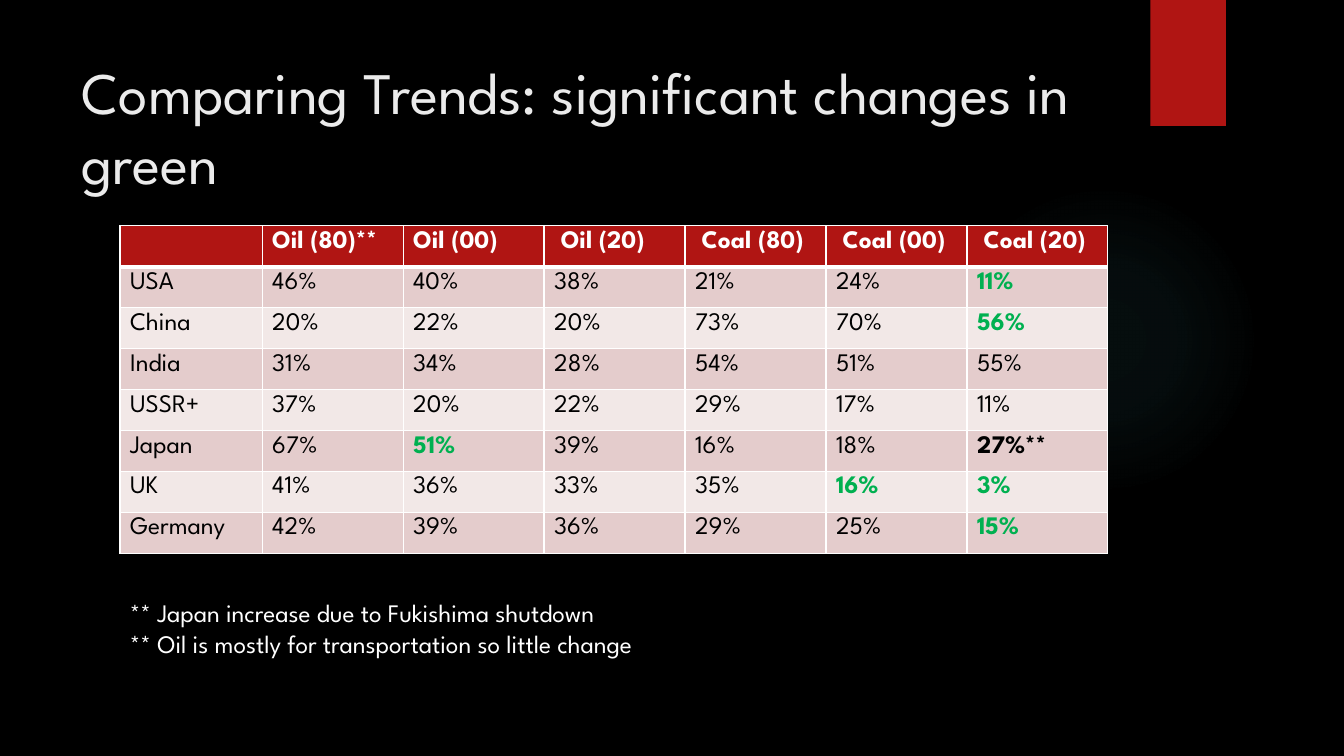
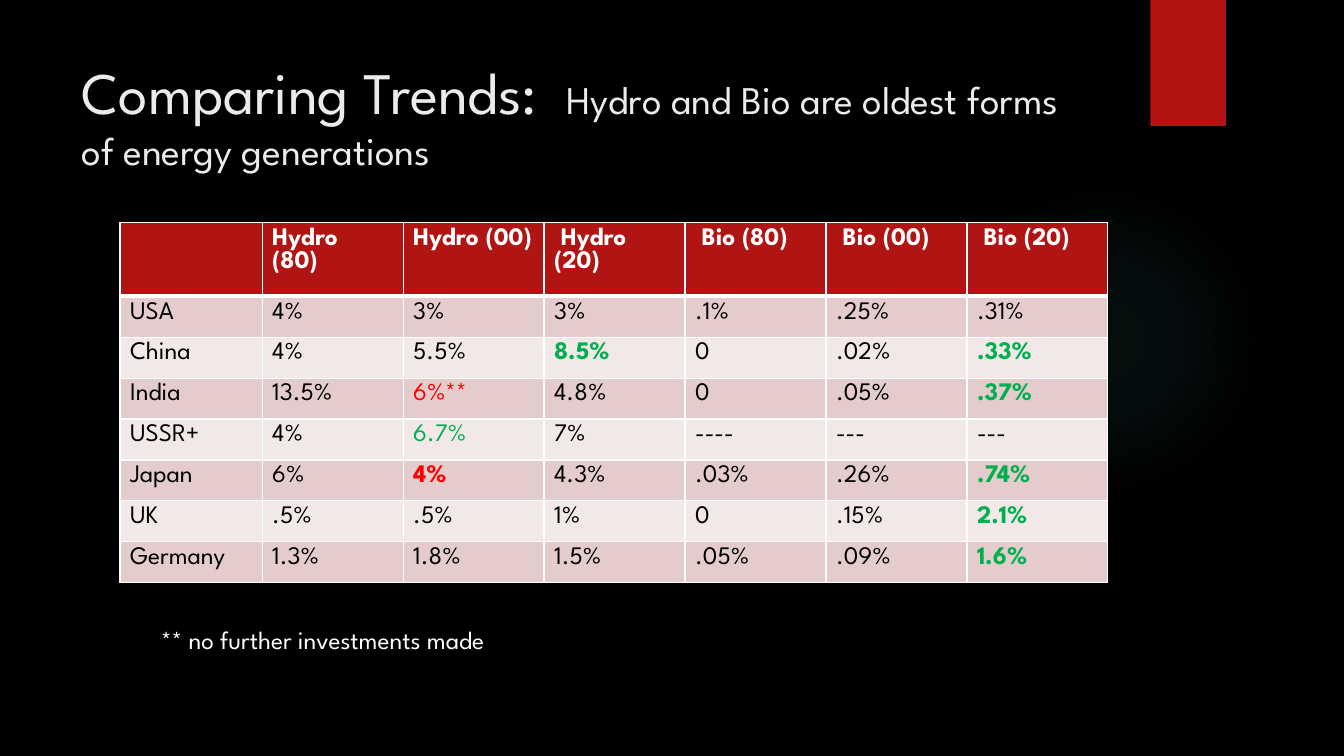
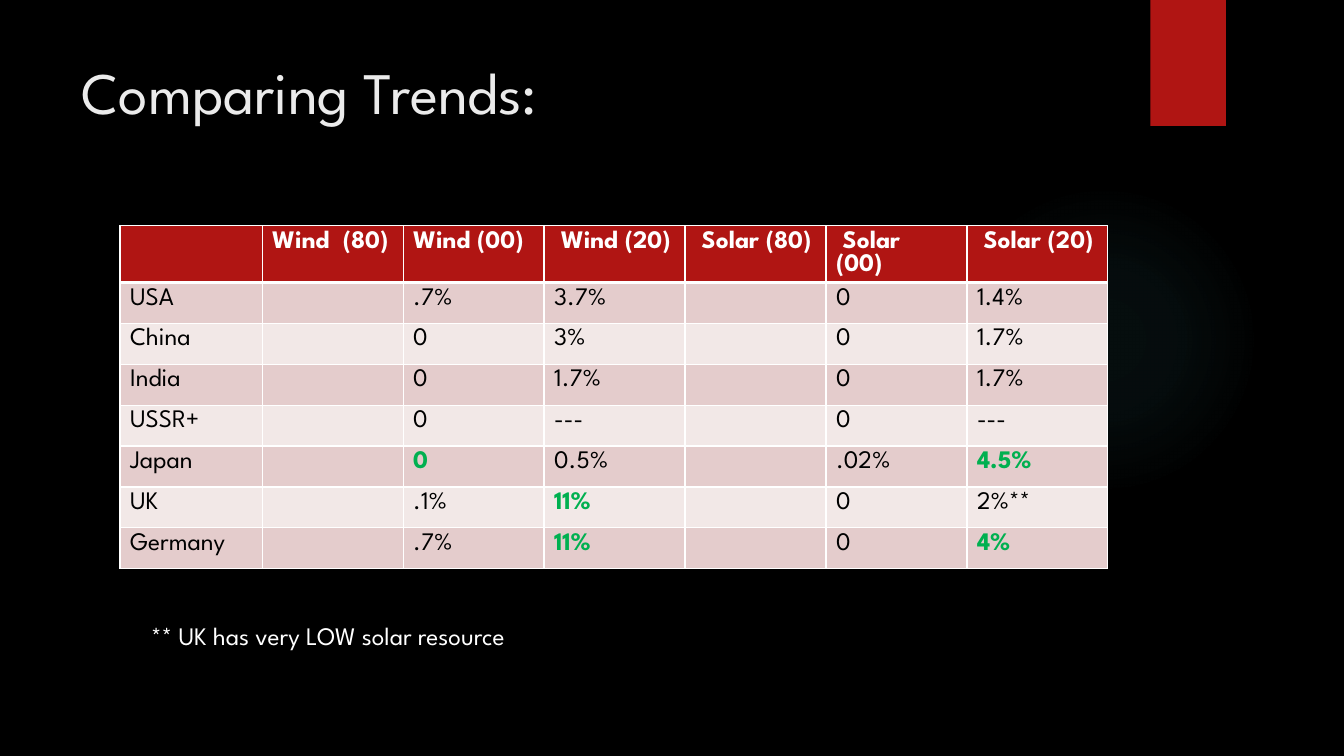
from lxml import etree
from pptx import Presentation
from pptx.dml.color import RGBColor
from pptx.enum.shapes import MSO_SHAPE
from pptx.enum.text import MSO_ANCHOR, MSO_AUTO_SIZE, PP_ALIGN
from pptx.oxml import parse_xml
from pptx.oxml.ns import qn
from pptx.util import Inches, Pt

OVAL, RECT = MSO_SHAPE.OVAL, MSO_SHAPE.RECTANGLE
TOP, LEFT = MSO_ANCHOR.TOP, PP_ALIGN.LEFT
FIXED = MSO_AUTO_SIZE.NONE

BLACK = RGBColor(0x00, 0x00, 0x00)
WHITE = RGBColor(0xFF, 0xFF, 0xFF)
PALE = RGBColor(0xEB, 0xEB, 0xEB)
RED = RGBColor(0xB0, 0x15, 0x13)
ROSE = RGBColor(0xE4, 0xCC, 0xCC)
BLUSH = RGBColor(0xF2, 0xE8, 0xE7)
GREEN = RGBColor(0x00, 0xB0, 0x50)
ALERT = RGBColor(0xFF, 0x00, 0x00)
TEAL = RGBColor(0x50, 0xB9, 0xC1)

FONT = "League Spartan"
NS = 'xmlns:a="http://schemas.openxmlformats.org/drawingml/2006/main"'

# Emphasis for single cells: colour, bold
UP, DOWN = (GREEN, True), (ALERT, True)
RISE, FALL = (GREEN, False), (ALERT, False)
STRONG, PLAIN = (BLACK, True), (BLACK, False)


class Deck:
    def __init__(self):
        self.prs = Presentation()
        self.prs.slide_width = Inches(13.33)
        self.prs.slide_height = Inches(7.5)
        fill = self.prs.slide_master.background.fill
        fill.solid()
        fill.fore_color.rgb = BLACK
        self.slide = None

    def start(self, *title):
        """Add a slide with the shared glow, tab and title."""
        self.slide = self.prs.slides.add_slide(self.prs.slide_layouts[5])
        self.glow()
        self.tab()
        self.title(title)

    def shape(self, kind, *box):
        shape = self.slide.shapes.add_shape(kind, *map(Inches, box))
        shape.shadow.inherit = False
        shape.line.fill.background()
        return shape

    def glow(self):
        shape = self.shape(OVAL, 9.41, 1.83, 3.08, 3.08)
        stops = "".join(
            f'<a:gs pos="{pos * 1000}"><a:srgbClr val="{TEAL}">'
            f'<a:alpha val="{alpha * 1000}"/></a:srgbClr></a:gs>'
            for pos, alpha in ((0, 7), (36, 6), (69, 0)))
        grad = parse_xml(
            f'<a:gradFill {NS}><a:gsLst>{stops}</a:gsLst><a:path path="circle">'
            '<a:fillToRect l="50000" t="50000" r="50000" b="50000"/>'
            '</a:path></a:gradFill>')
        shape.element.spPr.find(qn("a:prstGeom")).addnext(grad)

    def tab(self):
        shape = self.shape(RECT, 11.41, 0, 0.75, 1.25)
        shape.fill.solid()
        shape.fill.fore_color.rgb = RED
        shape.element.spPr.find(qn("a:effectLst")).append(parse_xml(
            f'<a:outerShdw {NS} blurRad="{Pt(3)}" dist="{Pt(2)}" dir="5400000" '
            f'rotWithShape="0"><a:srgbClr val="{BLACK}">'
            '<a:alpha val="45000"/></a:srgbClr></a:outerShdw>'))

    def run(self, para, text, size, color, bold=False):
        run = para.add_run()
        run.text = text
        font = run.font
        font.name, font.size, font.bold = FONT, Pt(size), bold
        font.color.rgb = color

    def title(self, parts):
        box = self.slide.shapes.title
        box.left, box.top = Inches(0.71), Inches(0.5)
        box.width, box.height = Inches(10.29), Inches(1.53)
        frame = box.text_frame
        frame.auto_size, frame.vertical_anchor = FIXED, TOP
        para = frame.paragraphs[0]
        para.alignment = LEFT
        for text, size in parts:
            self.run(para, text, size, PALE)

    def edges(self, cell, top, bottom):
        props = cell._tc.get_or_add_tcPr()
        for side, width in (("L", 1), ("R", 1), ("T", top), ("B", bottom)):
            line = etree.SubElement(props, qn(f"a:ln{side}"), w=str(Pt(width)))
            fill = etree.SubElement(line, qn("a:solidFill"))
            etree.SubElement(fill, qn("a:srgbClr"), val=str(WHITE))

    def table(self, top, rows, marks, head=None):
        """Draw rows; marks maps (row name, column) to an emphasis."""
        count = len(rows[0])
        left, width, first = Inches(1.19), Inches(9.8), Inches(1.41)
        grid = self.slide.shapes.add_table(
            len(rows), count, left, Inches(top), width, Inches(3.25)).table
        for col in grid.columns:
            col.width = (width - first) // (count - 1)
        grid.columns[0].width = first
        if head:
            grid.rows[0].height = Inches(head)
        for r, row in enumerate(rows):
            back = RED if r == 0 else ROSE if r % 2 else BLUSH
            for c, text in enumerate(row):
                cell = grid.cell(r, c)
                self.edges(cell, 3 if r == 1 else 1, 3 if r == 0 else 1)
                cell.fill.solid()
                cell.fill.fore_color.rgb = back
                style = marks.get((row[0], c), PLAIN) if r else (WHITE, True)
                if text:
                    self.run(cell.text_frame.paragraphs[0], text, 18, *style)

    def note(self, box, *lines):
        frame = self.slide.shapes.add_textbox(*map(Inches, box)).text_frame
        frame.word_wrap = True
        for i, text in enumerate(lines):
            para = frame.add_paragraph() if i else frame.paragraphs[0]
            self.run(para, text, 18, WHITE)


def main():
    deck = Deck()

    # Oil and coal
    deck.start(("Comparing Trends: significant changes in green", 42))
    deck.table(2.24, [
        ["", "Oil (80)**", "Oil (00)", " Oil (20)",
         " Coal (80)", " Coal (00)", " Coal (20)"],
        ["USA", "46%", "40%", "38%", "21%", "24%", "11%"],
        ["China", "20%", "22%", "20%", "73%", "70%", "56%"],
        ["India", "31%", "34%", "28%", "54%", "51%", "55%"],
        ["USSR+", "37%", "20%", "22%", "29%", "17%", "11%"],
        ["Japan", "67%", "51%", "39%", "16%", "18%", "27%**"],
        ["UK", "41%", "36%", "33%", "35%", "16%", "3%"],
        ["Germany", "42%", "39%", "36%", "29%", "25%", "15%"],
    ], {("USA", 6): UP, ("China", 6): UP, ("Japan", 2): UP,
        ("Japan", 6): STRONG, ("UK", 5): UP, ("UK", 6): UP,
        ("Germany", 6): UP})
    deck.note((1.19, 5.88, 8.9, 0.71),
              "** Japan increase due to Fukishima shutdown",
              "** Oil is mostly for transportation so little change")

    # Hydro and bio
    deck.start(("Comparing Trends:  ", 42),
               ("Hydro and Bio are oldest forms of energy generations", 28))
    deck.table(2.21, [
        ["", "Hydro  (80)", "Hydro (00)", " Hydro (20)",
         " Bio (80)", " Bio (00)", " Bio (20)"],
        ["USA", "4%", "3%", "3%", ".1%", ".25%", ".31%"],
        ["China", "4%", "5.5%", "8.5%", "0", ".02%", ".33%"],
        ["India", "13.5%", "6%**", "4.8%", "0", ".05%", ".37%"],
        ["USSR+", "4%", "6.7%", "7%", "----", "---", "---"],
        ["Japan", "6%", "4%", "4.3%", ".03%", ".26%", ".74%"],
        ["UK", ".5%", ".5%", "1%", "0", ".15%", "2.1%"],
        ["Germany", "1.3%", "1.8%", "1.5%", ".05%", ".09%", "1.6%"],
    ], {("China", 3): UP, ("China", 6): UP, ("India", 2): FALL,
        ("India", 6): UP, ("USSR+", 2): RISE, ("Japan", 2): DOWN,
        ("Japan", 6): UP, ("UK", 6): UP, ("Germany", 6): UP}, head=0.73)
    deck.note((1.5, 6.14, 4.55, 0.4), "** no further investments made")

    # Wind and solar
    deck.start(("Comparing Trends:", 42))
    deck.table(2.24, [
        ["", "Wind  (80)", "Wind (00)", " Wind (20)",
         " Solar (80)", " Solar  (00)", " Solar (20)"],
        ["USA", "", ".7%", "3.7%", "", "0", "1.4%"],
        ["China", "", "0", "3%", "", "0", "1.7%"],
        ["India", "", "0", "1.7%", "", "0", "1.7%"],
        ["USSR+", "", "0", "---", "", "0", "---"],
        ["Japan", "", "0", "0.5%", "", ".02%", "4.5%"],
        ["UK", "", ".1%", "11%", "", "0", "2%**"],
        ["Germany", "", ".7%", "11%", "", "0", "4%"],
    ], {("Japan", 2): UP, ("Japan", 6): UP, ("UK", 3): UP,
        ("Germany", 3): UP, ("Germany", 6): UP})
    deck.note((1.4, 6.11, 5.8, 0.4), "** UK has very LOW solar resource")

    deck.prs.save("out.pptx")


if __name__ == "__main__":
    main()
